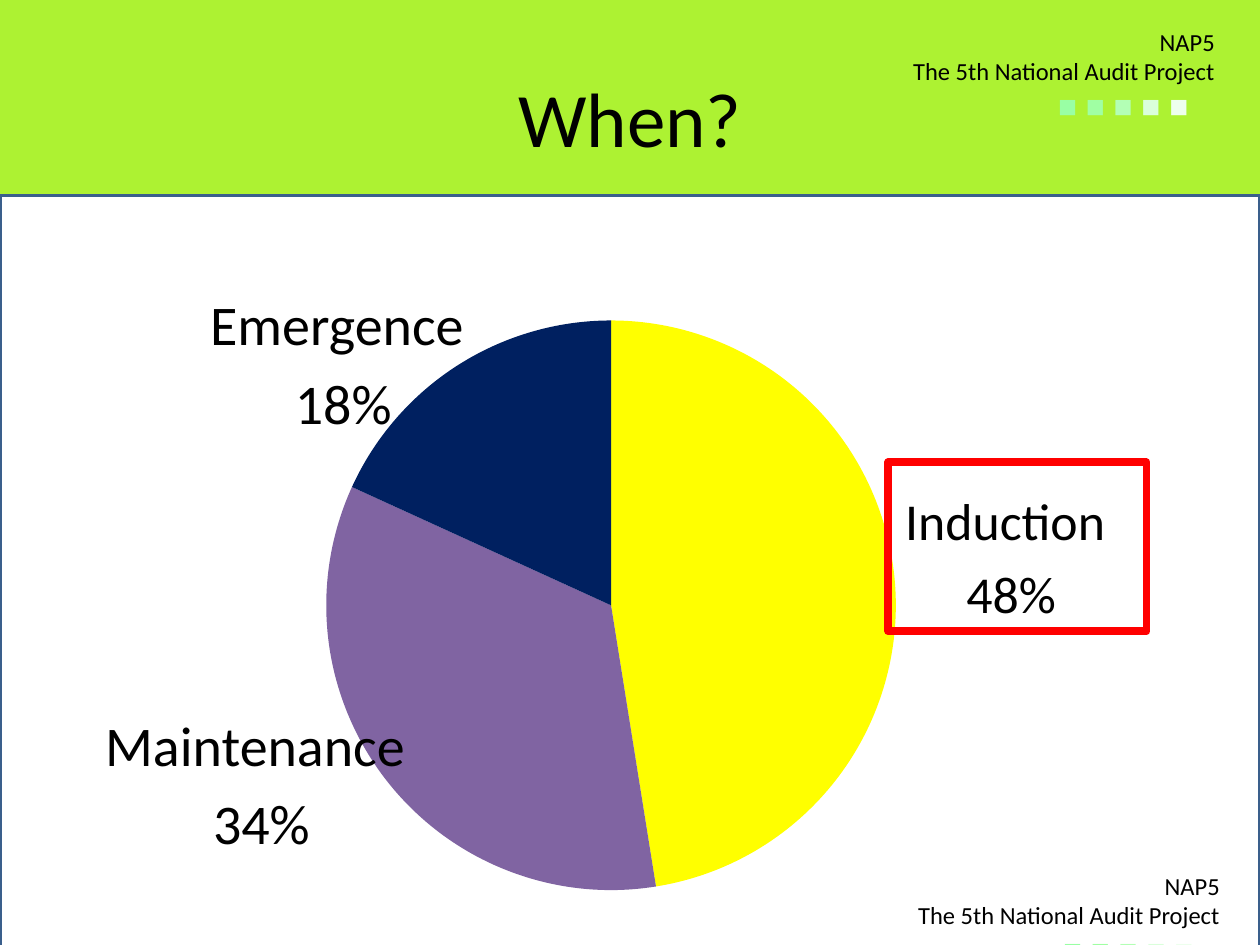
from pptx import Presentation
from pptx.chart.data import CategoryChartData
from pptx.dml.color import RGBColor
from pptx.enum.chart import XL_CHART_TYPE
from pptx.enum.shapes import MSO_SHAPE
from pptx.enum.text import MSO_ANCHOR, PP_ALIGN
from pptx.oxml import parse_xml
from pptx.oxml.ns import nsdecls
from pptx.util import Inches, Pt

PIE = XL_CHART_TYPE.PIE
RECTANGLE = MSO_SHAPE.RECTANGLE
TOP, MIDDLE = MSO_ANCHOR.TOP, MSO_ANCHOR.MIDDLE
LEFT, CENTER, RIGHT = PP_ALIGN.LEFT, PP_ALIGN.CENTER, PP_ALIGN.RIGHT


def color(value):
    return RGBColor.from_string(value)


def add_text(page, place, lines, anchor=TOP):
    """Each line is (alignment, size, font name, space before, [(text, colour), ...])."""
    box = page.shapes.add_textbox(*map(Inches, place))
    frame = box.text_frame
    frame.word_wrap = True
    frame.vertical_anchor = anchor
    for index, (align, size, name, before, spans) in enumerate(lines):
        para = frame.paragraphs[0] if index == 0 else frame.add_paragraph()
        para.alignment = align
        if index:
            para.space_before = Pt(before)
        for text, shade in spans:
            span = para.add_run()
            span.text = text
            for key, value in {"size": Pt(size), "name": name}.items():
                setattr(span.font, key, value)
            span.font.color.rgb = color(shade)
    return frame


deck = Presentation()
deck.slide_width, deck.slide_height = Inches(10), Inches(7.5)
page = deck.slides.add_slide(deck.slide_layouts[6])
page.background.fill.solid()
page.background.fill.fore_color.rgb = color("ADF232")

# White content panel
panel = page.shapes.add_shape(RECTANGLE, Inches(0), Inches(1.55), Inches(10), Inches(6.38))
panel.shadow.inherit = False
panel.fill.solid()
panel.fill.fore_color.rgb = color("FFFFFF")
panel.line.color.rgb = color("3A5F8C")
panel.line.width = Pt(2)

# Project name with a row of fading squares, at the top and at the foot
squares = [("■ ", "99FFA4"), ("■ ", "A0FFA3"), ("■ ", "B3FFB5"), ("■ ", "DAFFDB"), ("■", "EDFFED")]
project_lines = [
    (RIGHT, 14, "Calibri", 0, [("NAP5", "000000")]),
    (RIGHT, 14, "Calibri", 0, [("The 5th National Audit Project", "000000")]),
    (LEFT, 18, "Arial", 0, squares),
]
for left, top in [(6.57, 0.2), (6.61, 6.9)]:
    frame = add_text(page, (left, top, 3.17, 0.79), project_lines, MIDDLE)
    properties = frame.paragraphs[-1]._p.get_or_add_pPr()
    properties.set("marL", str(Inches(1.73)))
    properties.set("indent", "0")

add_text(page, (0.5, 0.3, 9, 1.25), [(CENTER, 44, "Calibri", 0, [("When?", "000000")])], MIDDLE)

# Pie of the three phases
data = CategoryChartData()
data.categories = ["1", "2", "3"]
data.add_series("Series 1", [47, 34, 18])
chart = page.shapes.add_chart(
    PIE, Inches(1.86), Inches(2.4), Inches(5.98), Inches(4.81), data
).chart
chart.has_legend = False
chart.has_title = False
for key, value in {"size": Pt(10), "name": "Calibri"}.items():
    setattr(chart.font, key, value)
chart.font.color.rgb = color("000000")
plot = chart.plots[0]
plot.vary_by_categories = True
for index, shade in enumerate(["FFFF00", "8064A2", "002060"]):
    point = plot.series[0].points[index]
    point.format.fill.solid()
    point.format.fill.fore_color.rgb = color(shade)

plot_area = chart._chartSpace.chart.plotArea
for layout in plot_area.findall("{*}layout"):
    plot_area.remove(layout)
modes = '<c:layoutTarget val="inner"/><c:xMode val="edge"/><c:yMode val="edge"/>'
sizes = '<c:x val="0.12"/><c:y val="0.03"/><c:w val="0.76"/><c:h val="0.94"/>'
plot_area.insert(0, parse_xml(
    f'<c:layout {nsdecls("c")}><c:manualLayout>{modes}{sizes}</c:manualLayout></c:layout>'
))

# Phase labels
phases = [
    ((0.1, 5.59, 3.95, 1.21), 32, "Maintenance ", "34%"),
    ((0.75, 2.25, 3.95, 1.42), 32, "Emergence ", "18%"),
    ((6.05, 3.83, 3.95, 1.1), 29.6, "Induction ", "48%"),
]
for place, size, phase, share in phases:
    add_text(page, place, [
        (CENTER, size, "Calibri", size * 0.2, [(text, "000000")]) for text in (phase, share)
    ])

# Highlight around the largest share
highlight = page.shapes.add_shape(RECTANGLE, Inches(7.05), Inches(3.67), Inches(2.05), Inches(1.34))
highlight.shadow.inherit = False
highlight.fill.background()
highlight.line.color.rgb = color("FF0000")
highlight.line.width = Pt(4.5)
highlight.line._get_or_add_ln().append(parse_xml(f'<a:round {nsdecls("a")}/>'))

deck.save("out.pptx")
